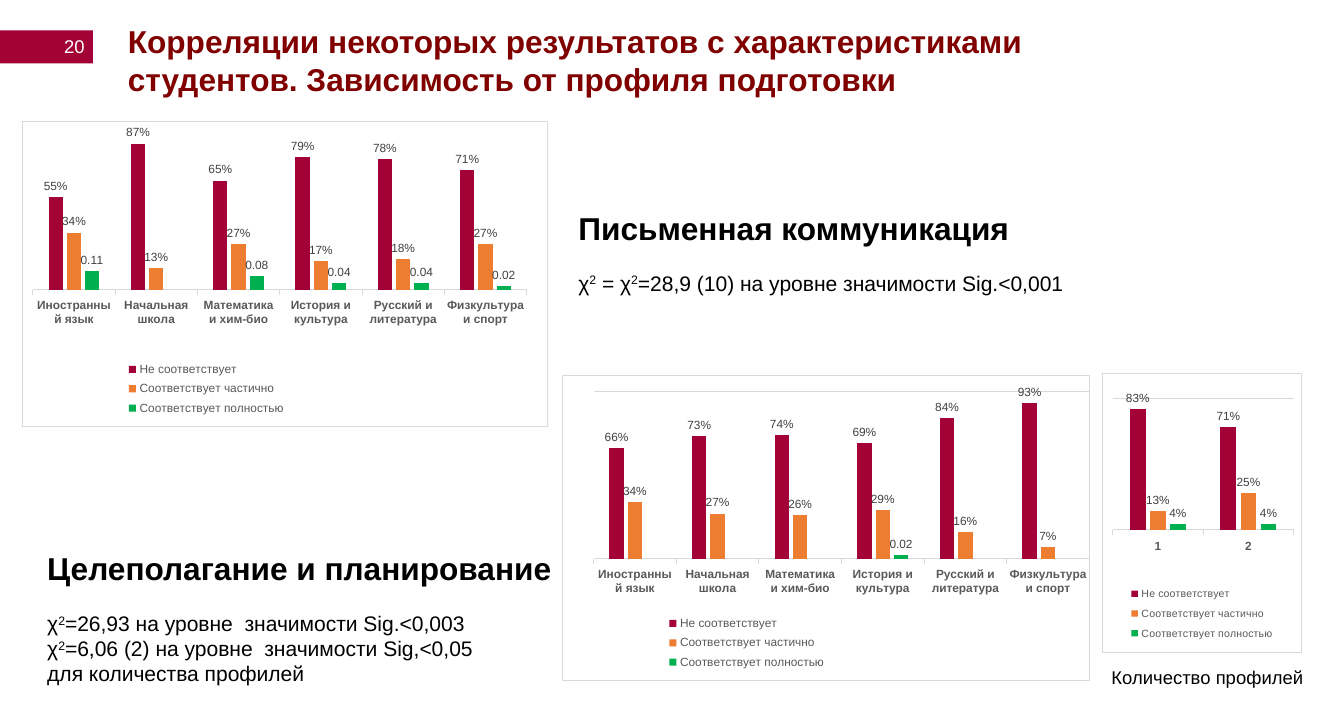
from lxml.etree import SubElement
from pptx import Presentation
from pptx.chart.data import CategoryChartData
from pptx.dml.color import RGBColor
from pptx.enum.chart import (XL_CHART_TYPE, XL_LABEL_POSITION, XL_LEGEND_POSITION,
                             XL_TICK_LABEL_POSITION, XL_TICK_MARK)
from pptx.enum.shapes import MSO_SHAPE
from pptx.enum.text import MSO_ANCHOR, PP_ALIGN
from pptx.oxml import parse_xml
from pptx.oxml.ns import nsdecls, qn
from pptx.util import Inches, Pt

FONT = "Arial"
CRIMSON = RGBColor(0xA3, 0x02, 0x36)
ORANGE = RGBColor(0xED, 0x7D, 0x31)
GREEN = RGBColor(0x00, 0xB0, 0x50)
MAROON = RGBColor(0x80, 0x00, 0x00)
BLACK = RGBColor(0x00, 0x00, 0x00)
WHITE = RGBColor(0xFF, 0xFF, 0xFF)
AXIS_GRAY = RGBColor(0x59, 0x59, 0x59)
LABEL_GRAY = RGBColor(0x40, 0x40, 0x40)
LINE_GRAY = RGBColor(0xD9, 0xD9, 0xD9)

TITLE = ("Корреляции некоторых результатов с характеристиками студентов. "
         "Зависимость от профиля подготовки")
# Heading, lines of the statistics, box
FINDINGS = [
    ("Письменная коммуникация",
     ["χ² = χ²=28,9 (10) на уровне значимости Sig.<0,001"],
     (6, 2.15, 6.29, 1.04)),
    ("Целеполагание и планирование",
     ["χ²=26,93 на уровне  значимости Sig.<0,003",
      "χ²=6,06 (2) на уровне  значимости Sig,<0,05",
      "для количества профилей"],
     (0.4, 5.74, 6.1, 1.58)),
]

LEVELS = [("Не соответствует", CRIMSON), ("Соответствует частично", ORANGE),
          ("Соответствует полностью", GREEN)]
PROFILES = ["Иностранный язык", "Начальная школа", "Математика и хим-био",
            "История и культура", "Русский и литература", "Физкультура и спорт"]
# Plot and legend areas are fractions of the chart: left, top, width, height
CHARTS = [
    {"box": (11.62, 3.94, 2.11, 2.95), "categories": ["1", "2"], "maximum": 0.9,
     "values": [(0.83, 0.71), (0.13, 0.25), (0.04, 0.04)],
     "formats": ["0%", "0%", "0%"],
     "plot": (0.05, 0.09, 0.91, 0.47), "legend": (0.08, 0.74, 0.84, 0.24),
     "legend_position": XL_LEGEND_POSITION.BOTTOM, "legend_size": 8},
    {"box": (0.23, 1.28, 5.55, 3.23), "categories": PROFILES, "maximum": 1,
     "values": [(0.55, 0.87, 0.65, 0.79, 0.78, 0.71),
                (0.34, 0.13, 0.27, 0.17, 0.18, 0.27),
                (0.11, None, 0.08, 0.04, 0.04, 0.02)],
     "formats": ["0%", "0%", "General"],
     "plot": (0.02, 0, 0.94, 0.55), "legend": (0.17, 0.77, 0.36, 0.21),
     "legend_position": XL_LEGEND_POSITION.RIGHT, "legend_size": 9},
    {"box": (5.92, 3.96, 5.57, 3.23), "categories": PROFILES, "maximum": 1,
     "values": [(0.66, 0.73, 0.74, 0.69, 0.84, 0.93),
                (0.34, 0.27, 0.26, 0.29, 0.16, 0.07),
                (None, None, None, 0.02, None, None)],
     "formats": ["0%", "0%", "General"],
     "plot": (0.06, 0.05, 0.94, 0.55), "legend": (0.17, 0.77, 0.36, 0.21),
     "legend_position": XL_LEGEND_POSITION.RIGHT, "legend_size": 9},
]


def style_font(font, size, color, bold=False):
    font.name = FONT
    font.size = Pt(size)
    font.bold = bold
    font.color.rgb = color


def add_text(slide, box, text, size, color, bold=False):
    text_frame = slide.shapes.add_textbox(*map(Inches, box)).text_frame
    text_frame.word_wrap = True
    text_frame.text = text
    style_font(text_frame.paragraphs[0].runs[0].font, size, color, bold)
    return text_frame


def add_statistics(text_frame, lines):
    """Add one paragraph of broken lines, with each ² set as a raised 2."""
    paragraph = text_frame.add_paragraph()
    paragraph.space_before = Pt(18)
    for number, line in enumerate(lines):
        if number:
            paragraph.add_line_break()
        for piece in line.replace("²", "|²|").split("|"):
            run = paragraph.add_run()
            run.text = piece.replace("²", "2")
            style_font(run.font, 16, BLACK)
            if piece == "²":
                run._r.get_or_add_rPr().set("baseline", "30000")


def make_layout(area, inner=False):
    layout = parse_xml(f"<c:layout {nsdecls('c')}/>")
    manual = SubElement(layout, qn("c:manualLayout"))
    settings = [("layoutTarget", "inner")] if inner else []
    settings += [("xMode", "edge"), ("yMode", "edge")]
    settings += zip("xywh", map(str, area))
    for tag, value in settings:
        SubElement(manual, qn(f"c:{tag}")).set("val", value)
    return layout


def style_line(line):
    line.color.rgb = LINE_GRAY
    line.width = Pt(0.75)


def add_column_chart(slide, content):
    data = CategoryChartData(number_format="0%")
    data.categories = content["categories"]
    for (name, _), values in zip(LEVELS, content["values"]):
        data.add_series(name, values)
    chart = slide.shapes.add_chart(XL_CHART_TYPE.COLUMN_CLUSTERED,
                                   *map(Inches, content["box"]), data).chart
    chart.has_title = False
    style_font(chart.font, 10, BLACK)
    chart._chartSpace.find(qn("c:chart")).addnext(parse_xml(
        f'<c:spPr {nsdecls("c", "a")}><a:solidFill><a:srgbClr val="{WHITE}"/></a:solidFill>'
        f'<a:ln w="{Pt(0.75)}"><a:solidFill><a:srgbClr val="{LINE_GRAY}"/></a:solidFill></a:ln>'
        '</c:spPr>'))

    category_axis = chart.category_axis
    category_axis.major_tick_mark = XL_TICK_MARK.OUTSIDE
    category_axis.tick_label_position = XL_TICK_LABEL_POSITION.NEXT_TO_AXIS
    style_font(category_axis.tick_labels.font, 9, AXIS_GRAY, True)
    style_line(category_axis.format.line)
    value_axis = chart.value_axis
    value_axis.visible = False
    value_axis.minimum_scale = 0
    value_axis.maximum_scale = value_axis.major_unit = content["maximum"]
    style_line(value_axis.major_gridlines.format.line)

    plot = chart.plots[0]
    plot.gap_width = 219
    plot.overlap = -27
    plot.vary_by_categories = False
    for series, (_, color), number_format in zip(plot.series, LEVELS, content["formats"]):
        series.format.fill.solid()
        series.format.fill.fore_color.rgb = color
        labels = series.data_labels
        labels.show_value = True
        labels.position = XL_LABEL_POSITION.OUTSIDE_END
        labels.number_format = number_format
        labels.number_format_is_linked = False
        style_font(labels.font, 9, LABEL_GRAY)

    chart.has_legend = True
    legend = chart.legend
    legend.position = content["legend_position"]
    legend.include_in_layout = False
    style_font(legend.font, content["legend_size"], AXIS_GRAY)
    plot_area = chart._chartSpace.find(".//" + qn("c:plotArea"))
    for parent in (plot_area, legend._element):
        for layout in parent.findall(qn("c:layout")):
            parent.remove(layout)
    plot_area.insert(0, make_layout(content["plot"], inner=True))
    legend._element.find(qn("c:legendPos")).addnext(make_layout(content["legend"]))


def main():
    presentation = Presentation()
    presentation.slide_width = Inches(14.17)
    presentation.slide_height = Inches(7.48)
    slide = presentation.slides.add_slide(presentation.slide_layouts[6])

    number_tab = slide.shapes.add_shape(MSO_SHAPE.RECTANGLE,
                                        *map(Inches, (0, 0.32, 0.98, 0.35)))
    number_tab.shadow.inherit = False
    number_tab.fill.solid()
    number_tab.fill.fore_color.rgb = CRIMSON
    number_tab.line.fill.background()
    slide_number = add_text(slide, (0.18, 0.29, 0.81, 0.4), "20", 14, WHITE)
    slide_number.vertical_anchor = MSO_ANCHOR.MIDDLE
    slide_number.paragraphs[0].alignment = PP_ALIGN.RIGHT

    add_text(slide, (1.25, 0.18, 10.63, 0.91), TITLE, 24, MAROON, True)
    for heading, lines, box in FINDINGS:
        add_statistics(add_text(slide, box, heading, 24, BLACK, True), lines)
    for content in CHARTS:
        add_column_chart(slide, content)
    add_text(slide, (11.62, 6.98, 2.3, 0.34), "Количество профилей", 14, BLACK)

    presentation.save("out.pptx")


if __name__ == "__main__":
    main()
